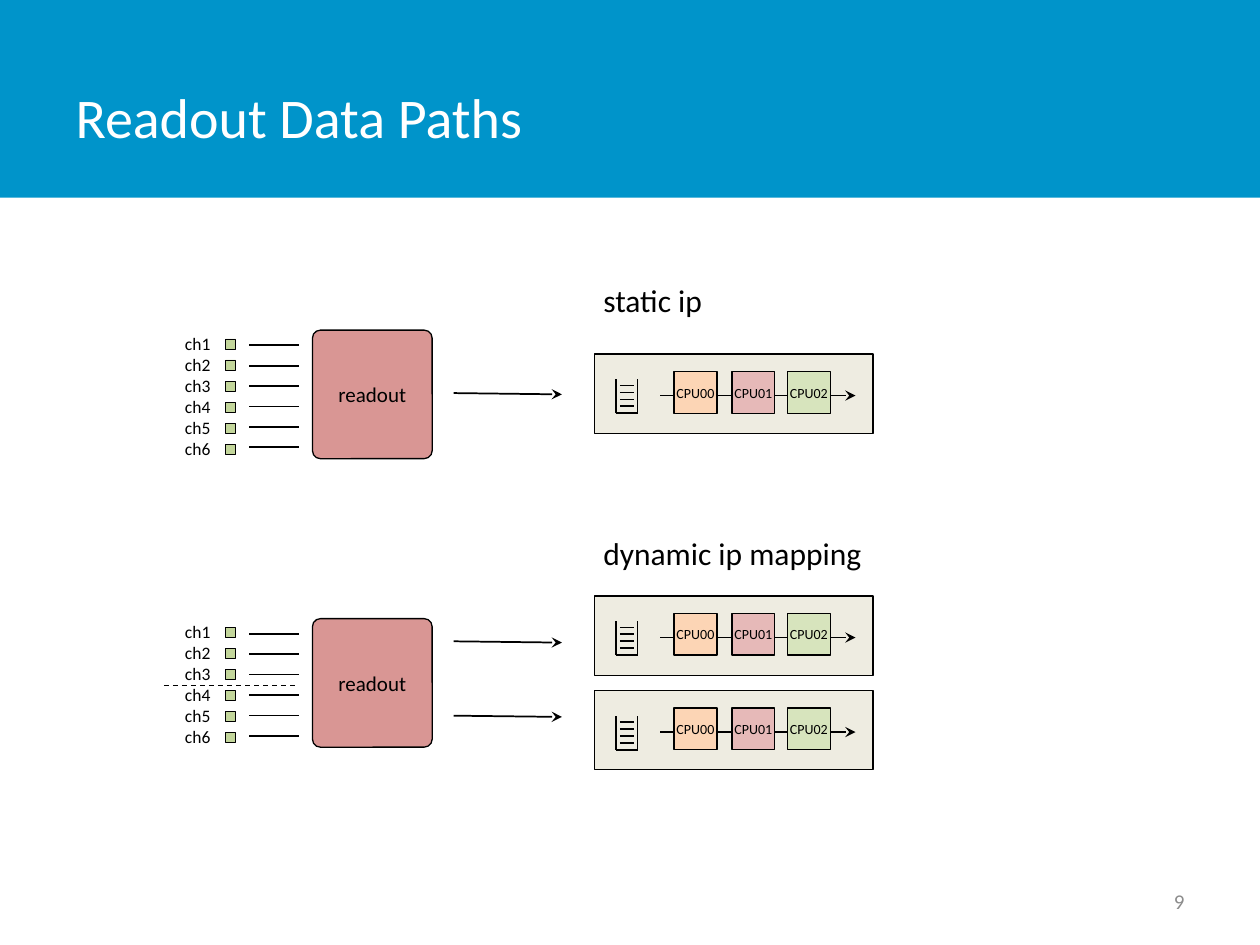
import pptx
import pptx.util
from pptx.dml.color import RGBColor
from pptx.enum.dml import MSO_LINE
from pptx.enum.shapes import MSO_CONNECTOR, MSO_SHAPE
from pptx.enum.text import MSO_ANCHOR, PP_ALIGN
from pptx.oxml.ns import qn
from lxml import etree

Inches = pptx.util.Inches

# Content
TITLE = "Readout Data Paths"
PAGE_NUMBER = "9"
CHANNELS = ["ch1", "ch2", "ch3", "ch4", "ch5", "ch6"]
CPUS = [("CPU00", 5.35, "orange"), ("CPU01", 5.81, "rose"), ("CPU02", 6.25, "lime")]
SCHEMES = [
    {"label": "static ip", "label_top": 2.18, "top": 2.62,
     "servers": [2.81], "arrows": [3.12], "split": False},
    {"label": "dynamic ip mapping", "label_top": 4.19, "top": 4.91,
     "servers": [4.73, 5.48], "arrows": [5.09, 5.68], "split": True},
]

THEME = {
    "font": "Calibri",
    "colours": {"banner": "0094CA", "white": "FFFFFF", "black": "000000",
                "grey": "8C8C8C", "readout": "D99694", "server": "EEECE1",
                "orange": "FCD5B5", "rose": "E6B9B8", "lime": "D7E4BD",
                "channel": "C3D69B"},
    "sizes": {"title": 32, "label": 18, "readout": 12, "number": 12,
              "channel": 10, "cpu": 8},
}

CHANNEL_PITCH = 0.167
WIRE_PITCH = 0.162


def colour(name):
    return RGBColor.from_string(THEME["colours"][name])


def write(shape, text, size, tint="black", align=PP_ALIGN.LEFT, anchor=MSO_ANCHOR.TOP):
    frame = shape.text_frame
    frame.text = text
    frame.word_wrap = True
    frame.vertical_anchor = anchor
    for para in frame.paragraphs:
        para.alignment = align
        for span in para.runs:
            span.font.name = THEME["font"]
            span.font.size = pptx.util.Pt(THEME["sizes"][size])
            span.font.color.rgb = colour(tint)


def add_text(page, at, text, size, **style):
    box = page.shapes.add_textbox(*map(Inches, at))
    write(box, text, size, **style)


def add_block(page, at, fill, text="", size=None, kind=MSO_SHAPE.RECTANGLE, width=0.75):
    block = page.shapes.add_shape(kind, *map(Inches, at))
    block.shadow.inherit = False
    block.fill.solid()
    block.fill.fore_color.rgb = colour(fill)
    if width:
        block.line.color.rgb = colour("black")
        block.line.width = pptx.util.Pt(width)
    else:
        block.line.fill.background()
    if text:
        write(block, text, size, align=PP_ALIGN.CENTER, anchor=MSO_ANCHOR.MIDDLE)
        block.text_frame.margin_left = block.text_frame.margin_right = 0
    return block


def add_line(page, x1, y1, x2, y2, width=1, arrow=False, dashed=False):
    line = page.shapes.add_connector(MSO_CONNECTOR.STRAIGHT, *map(Inches, (x1, y1, x2, y2)))
    line.line.color.rgb = colour("black")
    line.line.width = pptx.util.Pt(width)
    if dashed:
        line.line.dash_style = MSO_LINE.DASH
    if arrow:
        etree.SubElement(line.line._get_or_add_ln(), qn("a:tailEnd"), type="stealth")
    etree.SubElement(line.element.spPr, qn("a:effectLst"))


def add_server(page, top):
    add_block(page, (4.72, top, 2.21, 0.63), "server")
    # Processing chain
    add_line(page, 5.24, top + 0.33, 6.79, top + 0.33, arrow=True)
    for name, left, fill in CPUS:
        add_block(page, (left, top + 0.14, 0.34, 0.33), fill, name, "cpu")
    # Queue: two walls, a floor and four entries
    floor = top + 0.47
    for x in (4.89, 5.06):
        add_line(page, x, floor, x, top + 0.2)
    add_line(page, 4.89, floor, 5.06, floor)
    for entry in range(4):
        y = top + 0.25 + entry * 0.055
        add_line(page, 4.92, y, 5.03, y)


def add_scheme(page, scheme):
    top = scheme["top"]
    readout = add_block(page, (2.48, top, 0.95, 1.02), "readout", "readout", "readout",
                        kind=MSO_SHAPE.ROUNDED_RECTANGLE)
    readout.adjustments[0] = 0.066
    for server_top in scheme["servers"]:
        add_server(page, server_top)
    # Channels and their wires
    for row in range(len(CHANNELS)):
        add_block(page, (1.79, top + 0.07 + row * CHANNEL_PITCH, 0.08, 0.08), "channel",
                  width=0.25)
        wire = top + 0.12 + row * WIRE_PITCH
        add_line(page, 1.98, wire, 2.37, wire)
    if scheme["split"]:
        add_line(page, 1.3, top + 0.53, 2.37, top + 0.53, width=0.75, dashed=True)
    add_text(page, (1.37, top - 0.03, 0.43, 1.11), "\n".join(CHANNELS), "channel")
    # Output paths
    for y in scheme["arrows"]:
        add_line(page, 3.6, y, 4.46, y + 0.01, arrow=True)
    add_text(page, (4.69, scheme["label_top"], 3.4, 0.4), scheme["label"], "label")


def main():
    deck = pptx.Presentation()
    deck.slide_width, deck.slide_height = Inches(10), Inches(7.5)
    page = deck.slides.add_slide(deck.slide_layouts[5])

    # Title on its banner
    title = page.shapes.title
    title.left, title.top, title.width, title.height = map(Inches, (0.5, 0.3, 7.81, 1.25))
    write(title, TITLE, "title", tint="white", anchor=MSO_ANCHOR.MIDDLE)
    banner = add_block(page, (0, 0, 10, 1.57), "banner", width=0)
    title.element.addprevious(banner.element)

    for scheme in SCHEMES:
        add_scheme(page, scheme)

    add_text(page, (7.17, 6.95, 2.33, 0.4), PAGE_NUMBER, "number", tint="grey",
             align=PP_ALIGN.RIGHT, anchor=MSO_ANCHOR.MIDDLE)
    deck.save("out.pptx")


if __name__ == "__main__":
    main()
